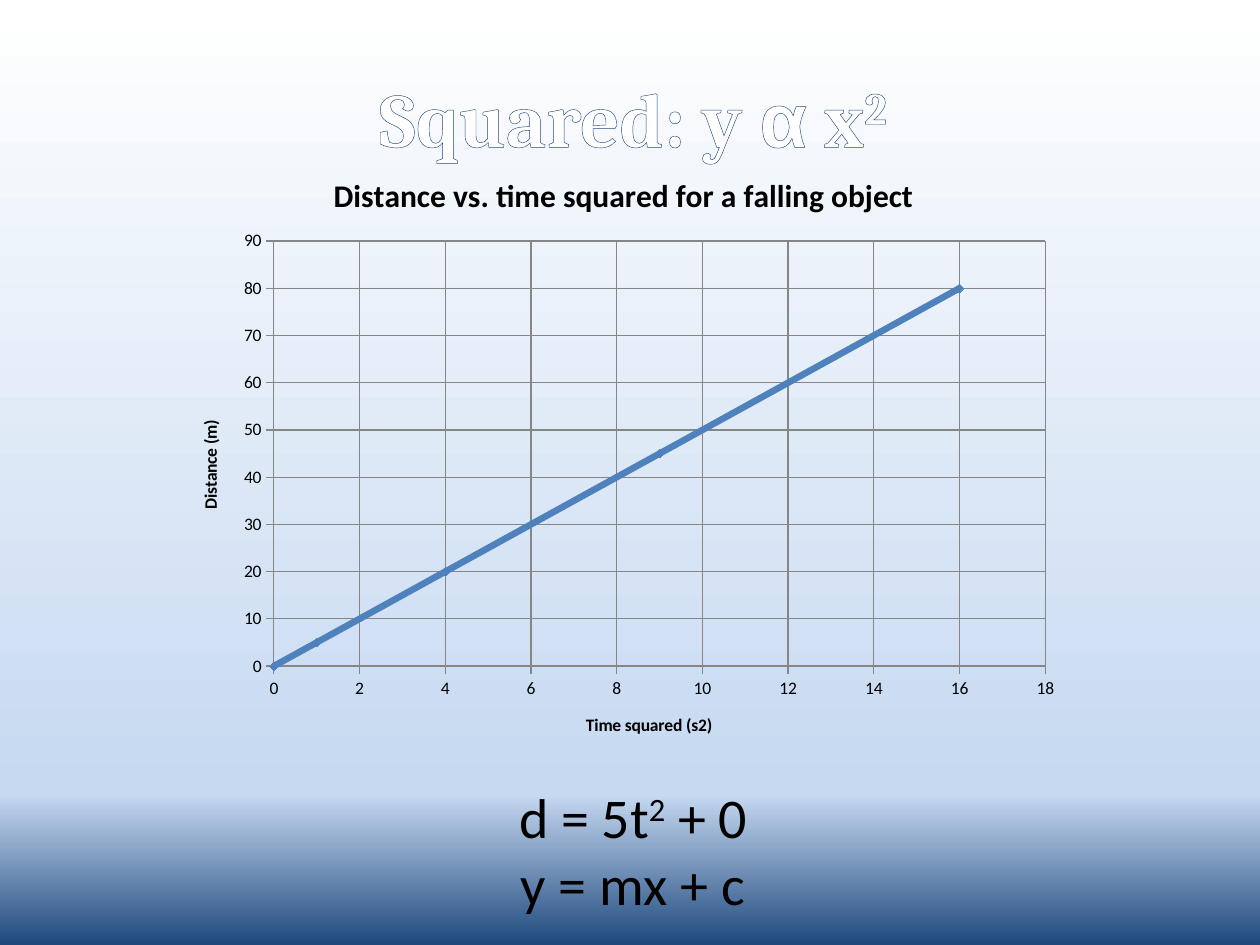
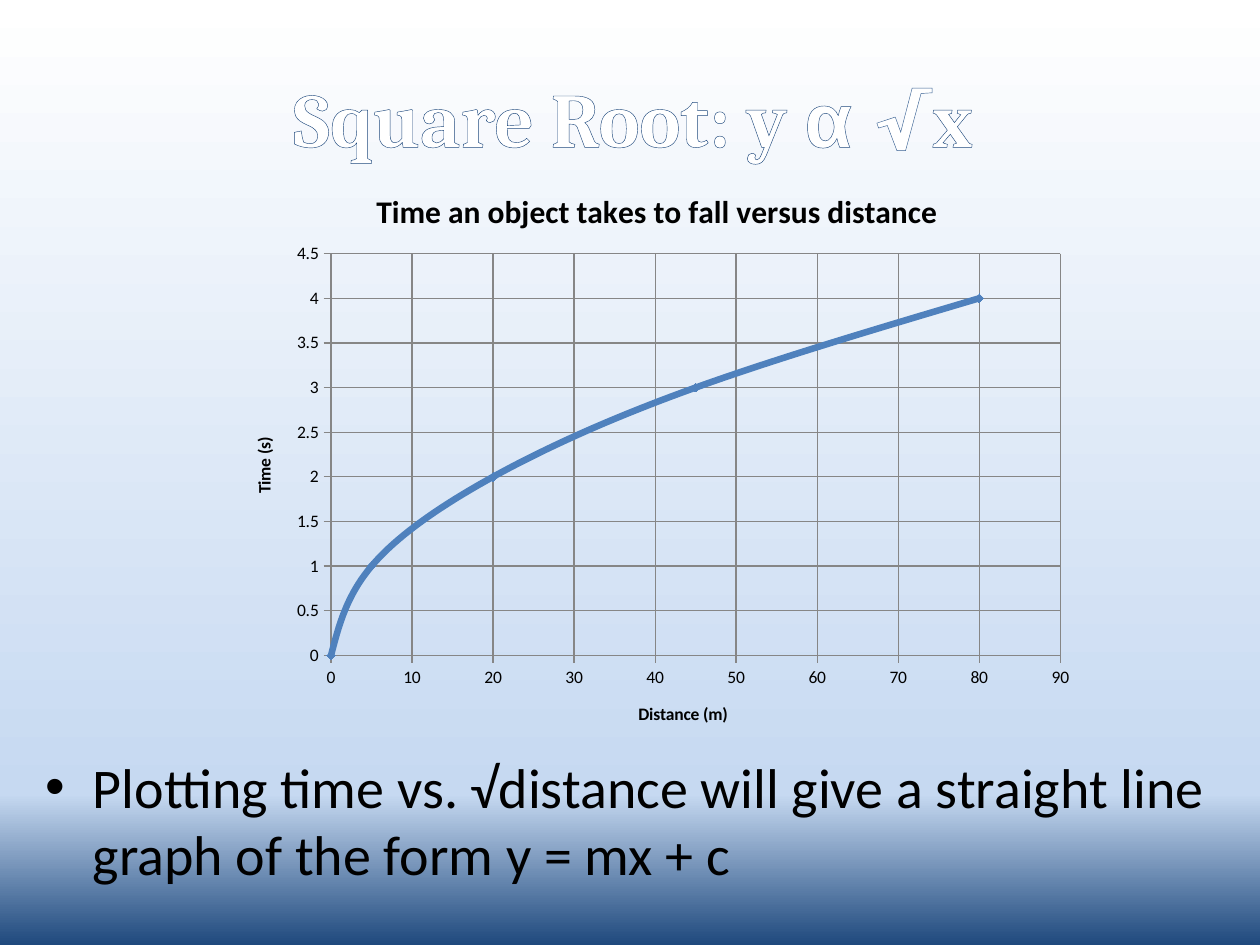
from dataclasses import dataclass
from typing import NamedTuple

from lxml.etree import SubElement
from pptx import Presentation
from pptx.chart.data import XyChartData
from pptx.dml.color import RGBColor
from pptx.enum.chart import XL_CHART_TYPE as ChartType
from pptx.enum.chart import XL_MARKER_STYLE as Marker
from pptx.enum.chart import XL_TICK_MARK as TickMark
from pptx.enum.text import MSO_ANCHOR as Anchor
from pptx.enum.text import PP_ALIGN as Align
from pptx.oxml.ns import qn
from pptx.util import Emu, Inches, Pt

COLORS = {
    "navy": "1F497D",
    "root": "376092",
    "sky": "C6D9F1",
    "white": "FFFFFF",
    "black": "000000",
    "series": "4F81BD",
    "grid": "868686",
}
BACKGROUND_STOPS = ((0, "navy"), (16, "sky"), (100, "white"))
HEADING_FONT, SYMBOL_FONT, BODY_FONT = "Cambria", "Arial", "Calibri"

# The slide is a grid of 100 columns by 75 rows
SLIDE_WIDTH, SLIDE_HEIGHT = Inches(10), Inches(7.5)
COLUMN, ROW = SLIDE_WIDTH / 100, SLIDE_HEIGHT / 75


class Box(NamedTuple):
    column: float
    row: float
    columns: float
    rows: float

    def place(self) -> tuple:
        return (Emu(round(self.column * COLUMN)), Emu(round(self.row * ROW)),
                Emu(round(self.columns * COLUMN)), Emu(round(self.rows * ROW)))


class Piece(NamedTuple):
    text: str
    font: str
    outline: str = ""
    raised: bool = False


class Axis(NamedTuple):
    title: str
    maximum: float
    step: float


@dataclass
class Graph:
    title: str
    kind: ChartType
    box: Box
    plot: Box  # shares of the chart's size
    points: tuple
    x_axis: Axis
    y_axis: Axis


@dataclass
class GraphSlide:
    title: list
    graph: Graph
    note: list
    note_box: Box
    bulleted: bool = False


TITLE_BOX = Box(2.6, 3, 95.3, 12.5)


def heading(text: str, font: str = HEADING_FONT, outline: str = "navy",
            raised: bool = False) -> Piece:
    return Piece(text, font, outline, raised)


def body(text: str, raised: bool = False) -> Piece:
    return Piece(text, BODY_FONT, raised=raised)


GRAPH_SLIDES = [
    GraphSlide(
        title=[heading("Squared: y "), heading("α", SYMBOL_FONT),
               heading(" x"), heading("2", raised=True)],
        graph=Graph(
            "Distance vs. time squared for a falling object",
            ChartType.XY_SCATTER_LINES,
            Box(13.9, 11.8, 71.2, 48.9), Box(0.11, 0.15, 0.86, 0.69),
            ((0, 0), (1, 5), (4, 20), (9, 45), (16, 80)),
            Axis("Time squared (s2)", 18, 2), Axis("Distance (m)", 90, 10)),
        note=[[body("d = 5t"), body("2", raised=True), body(" + 0")],
              [body("y = mx + c")]],
        note_box=Box(2.6, 61.6, 95.3, 11.8)),
    GraphSlide(
        title=[heading("Square Root: y "), heading("α ", SYMBOL_FONT),
               heading("√", outline="root"), heading("x")],
        graph=Graph(
            "Time an object takes to fall versus distance",
            ChartType.XY_SCATTER_SMOOTH,
            Box(18.1, 13.1, 68.1, 46.9), Box(0.12, 0.15, 0.85, 0.68),
            ((0, 0), (5, 1), (20, 2), (45, 3), (80, 4)),
            Axis("Distance (m)", 90, 10), Axis("Time (s)", 4.5, 0.5)),
        note=[[body("Plotting time vs. √distance will give a straight line "
                    "graph of the form y = mx + c")]],
        note_box=Box(2.6, 59.2, 95.3, 13.4),
        bulleted=True),
]


def rgb(name: str) -> RGBColor:
    return RGBColor.from_string(COLORS[name])


def add_color(parent, name: str) -> None:
    SubElement(parent, qn("a:srgbClr"), val=COLORS[name])


def paint_background(slide) -> None:
    fill = slide.background.fill
    fill.gradient()
    fill.gradient_angle = 90
    stops = slide._element.find(".//" + qn("a:gsLst"))
    for stop in list(stops):
        stops.remove(stop)
    for percent, name in BACKGROUND_STOPS:
        add_color(SubElement(stops, qn("a:gs"), pos=str(percent * 1000)), name)


def format_font(font, *, size: float, color: str = "black", bold: bool = False,
                name: str = BODY_FONT) -> None:
    font.size, font.bold, font.name = Pt(size), bold, name
    font.color.rgb = rgb(color)


def add_outline(run, color: str) -> None:
    properties = run._r.get_or_add_rPr()
    line = SubElement(properties, qn("a:ln"), w=str(Pt(2.48)))
    add_color(SubElement(line, qn("a:solidFill")), color)
    properties.insert(0, line)


def add_bullet(paragraph) -> None:
    properties = paragraph._p.get_or_add_pPr()
    indent = Inches(0.38)
    properties.set("marL", str(indent))
    properties.set("indent", str(-indent))
    SubElement(properties, qn("a:buFont"), typeface=SYMBOL_FONT)
    SubElement(properties, qn("a:buChar"), char="•")


def add_text(slide, box: Box, lines: list, *, size: float, color: str = "black",
             bold: bool = False, align: Align = Align.CENTER,
             anchor: Anchor = Anchor.TOP, bulleted: bool = False) -> None:
    frame = slide.shapes.add_textbox(*box.place()).text_frame
    frame.word_wrap, frame.vertical_anchor = True, anchor
    for index, pieces in enumerate(lines):
        paragraph = frame.add_paragraph() if index else frame.paragraphs[0]
        paragraph.alignment = align
        if bulleted:
            add_bullet(paragraph)
        for piece in pieces:
            run = paragraph.add_run()
            run.text = piece.text
            format_font(run.font, size=size, color=color, bold=bold, name=piece.font)
            if piece.raised:
                run._r.get_or_add_rPr().set("baseline", "30000")
            if piece.outline:
                add_outline(run, piece.outline)


def set_title(owner, text: str, size: float) -> None:
    frame = owner.text_frame
    frame.text = text
    format_font(frame.paragraphs[0].runs[0].font, size=size, bold=True)


def format_axis(axis, settings: Axis) -> None:
    axis.minimum_scale, axis.maximum_scale = 0, settings.maximum
    axis.major_unit = settings.step
    axis.major_tick_mark, axis.minor_tick_mark = TickMark.OUTSIDE, TickMark.NONE
    axis.has_major_gridlines = True
    for line in (axis.major_gridlines.format.line, axis.format.line):
        line.color.rgb, line.width = rgb("grid"), Pt(0.75)
    axis.tick_labels.number_format = "General"
    axis.tick_labels.number_format_is_linked = False
    set_title(axis.axis_title, settings.title, 10)


def place_plot(chart, plot: Box) -> None:
    area = chart._chartSpace.find(".//" + qn("c:plotArea"))
    layout = area.find(qn("c:layout"))
    if layout is None:
        layout = SubElement(area, qn("c:layout"))
        area.insert(0, layout)
    manual = SubElement(layout, qn("c:manualLayout"))
    settings = dict(layoutTarget="inner", xMode="edge", yMode="edge",
                    x=plot.column, y=plot.row, w=plot.columns, h=plot.rows)
    for tag, value in settings.items():
        SubElement(manual, qn(f"c:{tag}"), val=str(value))


def add_graph(slide, graph: Graph) -> None:
    data = XyChartData()
    series_data = data.add_series("Series 1")
    for x, y in graph.points:
        series_data.add_data_point(x, y)
    chart = slide.shapes.add_chart(graph.kind, *graph.box.place(), data).chart
    chart.has_legend = False
    format_font(chart.font, size=10)
    chart.has_title = True
    set_title(chart.chart_title, graph.title, 18)
    chart.chart_title.include_in_layout = False

    format_axis(chart.category_axis, graph.x_axis)
    format_axis(chart.value_axis, graph.y_axis)
    rotation = chart.value_axis.axis_title.text_frame._txBody.bodyPr
    rotation.set("rot", "-5400000")
    rotation.set("vert", "horz")
    place_plot(chart, graph.plot)

    plot = chart.plots[0]
    plot.vary_by_categories = False
    series = plot.series[0]
    series._element.get_or_add_smooth().val = graph.kind == ChartType.XY_SCATTER_SMOOTH
    series.format.line.color.rgb, series.format.line.width = rgb("series"), Pt(3.75)
    series.marker.style, series.marker.size = Marker.DIAMOND, 5
    series.marker.format.fill.solid()
    series.marker.format.fill.fore_color.rgb = rgb("series")
    series.marker.format.line.color.rgb = rgb("series")


def build_slide(presentation, content: GraphSlide) -> None:
    slide = presentation.slides.add_slide(presentation.slide_layouts[6])
    paint_background(slide)
    add_text(slide, TITLE_BOX, [content.title], size=44, color="white",
             bold=True, anchor=Anchor.MIDDLE)
    add_text(slide, content.note_box, content.note, size=32,
             align=Align.LEFT if content.bulleted else Align.CENTER,
             bulleted=content.bulleted)
    add_graph(slide, content.graph)


def main() -> None:
    presentation = Presentation()
    presentation.slide_width, presentation.slide_height = SLIDE_WIDTH, SLIDE_HEIGHT
    for content in GRAPH_SLIDES:
        build_slide(presentation, content)
    presentation.save("out.pptx")


if __name__ == "__main__":
    main()
